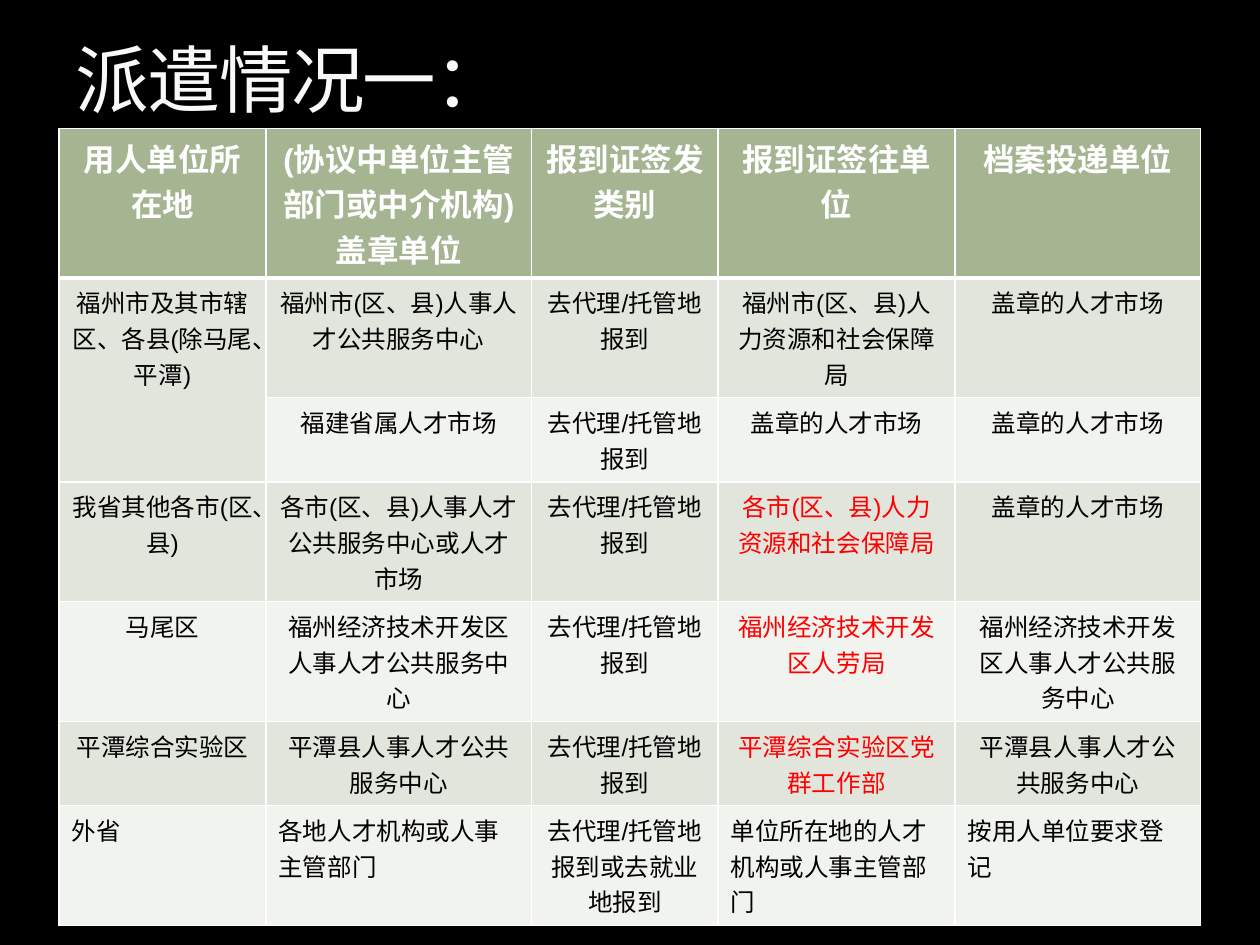
from pptx import Presentation
from pptx.dml.color import RGBColor
from pptx.enum.text import MSO_ANCHOR, MSO_AUTO_SIZE, PP_ALIGN
from pptx.oxml.ns import qn
from pptx.util import Inches, Pt
from lxml.etree import SubElement

WHITE, BLACK, RED = "FFFFFF", "000000", "FF0000"
HEADER_FILL = "A5B592"
BAND_FILLS = ["F0F3EE", "E1E5DC"]

COLUMN_WIDTHS = [1.64, 2.11, 1.48, 1.88, 1.95]
ROW_HEIGHTS = [1.09, 0.57, 0.57, 0.81, 0.81, 0.57, 0.57]

AGENT = "去代理/托管地报到"
MARKET = "盖章的人才市场"
ROWS = [
    ["用人单位所在地", "(协议中单位主管部门或中介机构)\n盖章单位",
     "报到证签发类别", "报到证签往单位", "档案投递单位"],
    ["福州市及其市辖区、各县(除马尾、平潭)", "福州市(区、县)人事人才公共服务中心",
     AGENT, "福州市(区、县)人力资源和社会保障局", MARKET],
    ["", "福建省属人才市场", AGENT, MARKET, MARKET],
    ["我省其他各市(区、县)", "各市(区、县)人事人才公共服务中心或人才市场",
     AGENT, "各市(区、县)人力资源和社会保障局", MARKET],
    ["马尾区", "福州经济技术开发区人事人才公共服务中心",
     AGENT, "福州经济技术开发区人劳局", "福州经济技术开发区人事人才公共服务中心"],
    ["平潭综合实验区", "平潭县人事人才公共服务中心",
     AGENT, "平潭综合实验区党群工作部", "平潭县人事人才公共服务中心"],
    ["外省", "各地人才机构或人事主管部门",
     AGENT + "或去就业地报到", "单位所在地的人才机构或人事主管部门", "按用人单位要求登记"],
]
LAST_ROW = len(ROWS) - 1
CATEGORY_COLUMN, ISSUED_TO_COLUMN = 2, 3
RED_ROWS = {3, 4, 5}


def color(hex_string):
    return RGBColor.from_string(hex_string)


def write_text(frame, text, *, size, fill, font="Arial", bold=False,
               align=PP_ALIGN.LEFT, spacing=None):
    frame.text = text
    frame.word_wrap = True
    for paragraph in frame.paragraphs:
        paragraph.alignment = align
        for run in paragraph.runs:
            run.font.name = font
            run.font.size = Pt(size)
            run.font.bold = bold
            run.font.color.rgb = color(fill)
            if spacing is not None:
                run.font._element.set("spc", str(round(spacing * 100)))


def set_borders(cell, **widths):
    """Draw white borders; widths maps L, R, T and B to points (1 if absent)."""
    properties = cell._tc.get_or_add_tcPr()
    for side in "LRTB":
        line = SubElement(properties, qn(f"a:ln{side}"), w=str(Pt(widths.get(side, 1))))
        solid = SubElement(line, qn("a:solidFill"))
        SubElement(solid, qn("a:srgbClr"), val=WHITE)


def format_cell(cell, row, column):
    header = row == 0
    set_borders(cell, T=3 if row == 1 else 1, B=3 if header else 1)
    cell.fill.solid()
    cell.fill.fore_color.rgb = color(HEADER_FILL if header else BAND_FILLS[row % 2])

    red = row in RED_ROWS and column == ISSUED_TO_COLUMN
    left = row == LAST_ROW and column != CATEGORY_COLUMN
    write_text(cell.text_frame, ROWS[row][column],
               size=18 if header else 14,
               fill=WHITE if header else RED if red else BLACK,
               bold=header,
               align=PP_ALIGN.LEFT if left else PP_ALIGN.CENTER)


def add_dispatch_table(slide):
    frame = slide.shapes.add_table(
        len(ROWS), len(COLUMN_WIDTHS), Inches(0.47), Inches(1.02),
        Inches(sum(COLUMN_WIDTHS)), Inches(sum(ROW_HEIGHTS)))
    table = frame.table
    table.horz_banding = False
    for column, width in zip(table.columns, COLUMN_WIDTHS):
        column.width = Inches(width)
    for row, height in zip(table.rows, ROW_HEIGHTS):
        row.height = Inches(height)
    for row in range(len(ROWS)):
        for column in range(len(COLUMN_WIDTHS)):
            format_cell(table.cell(row, column), row, column)
    table.cell(1, 0).merge(table.cell(2, 0))


def set_title(slide, text):
    title = slide.shapes.title
    title.left, title.top = Inches(0.5), Inches(0.17)
    title.width, title.height = Inches(9), Inches(0.85)
    title.text_frame.auto_size = MSO_AUTO_SIZE.NONE
    title.text_frame.vertical_anchor = MSO_ANCHOR.BOTTOM
    write_text(title.text_frame, text, size=42, fill="F9F9F9",
               font="Cambria", spacing=-1)


def main():
    presentation = Presentation()
    presentation.slide_width, presentation.slide_height = Inches(10), Inches(7.5)
    slide = presentation.slides.add_slide(presentation.slide_layouts[5])
    slide.background.fill.solid()
    slide.background.fill.fore_color.rgb = color(BLACK)
    add_dispatch_table(slide)
    set_title(slide, "派遣情况一：")
    presentation.save("out.pptx")


if __name__ == "__main__":
    main()
